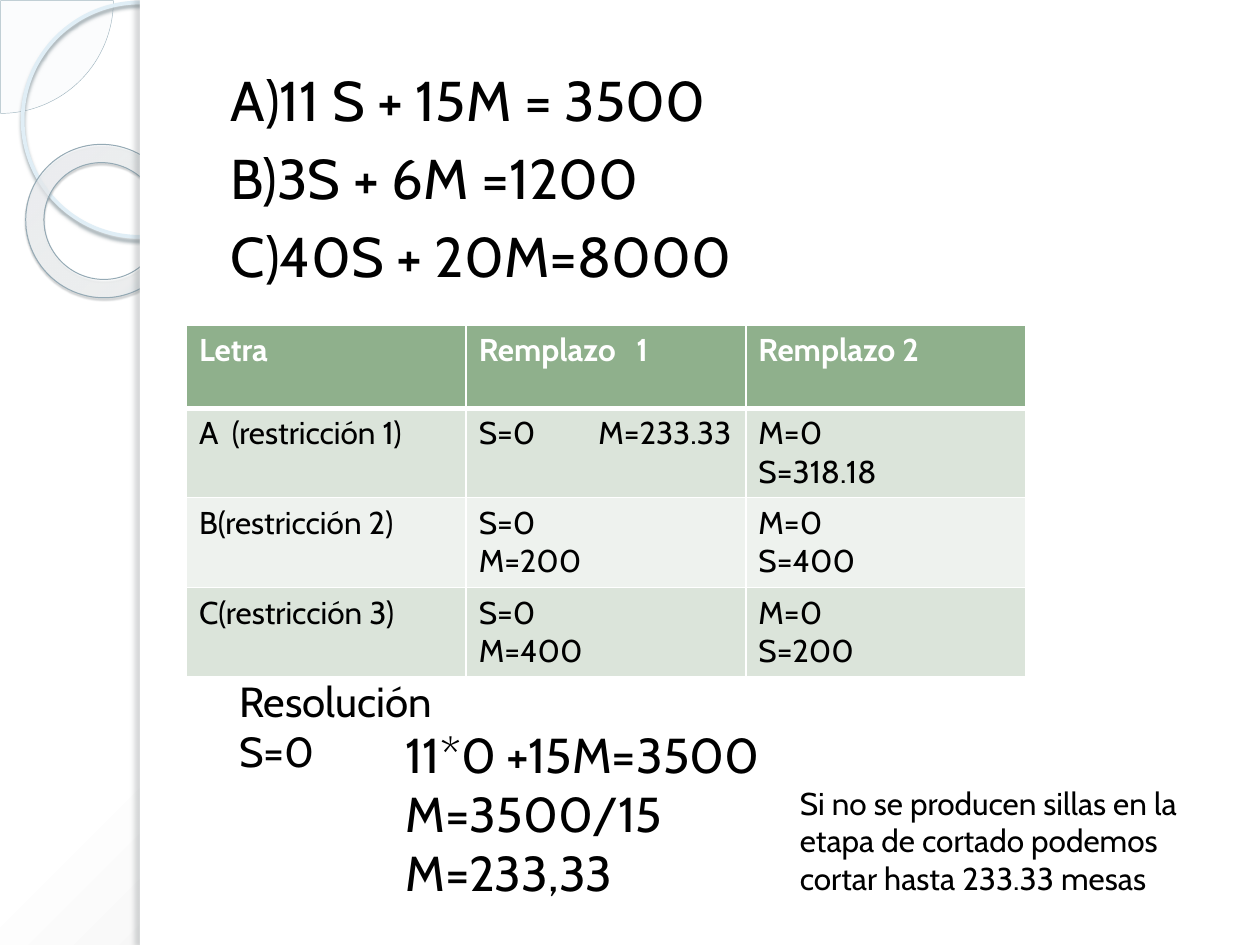
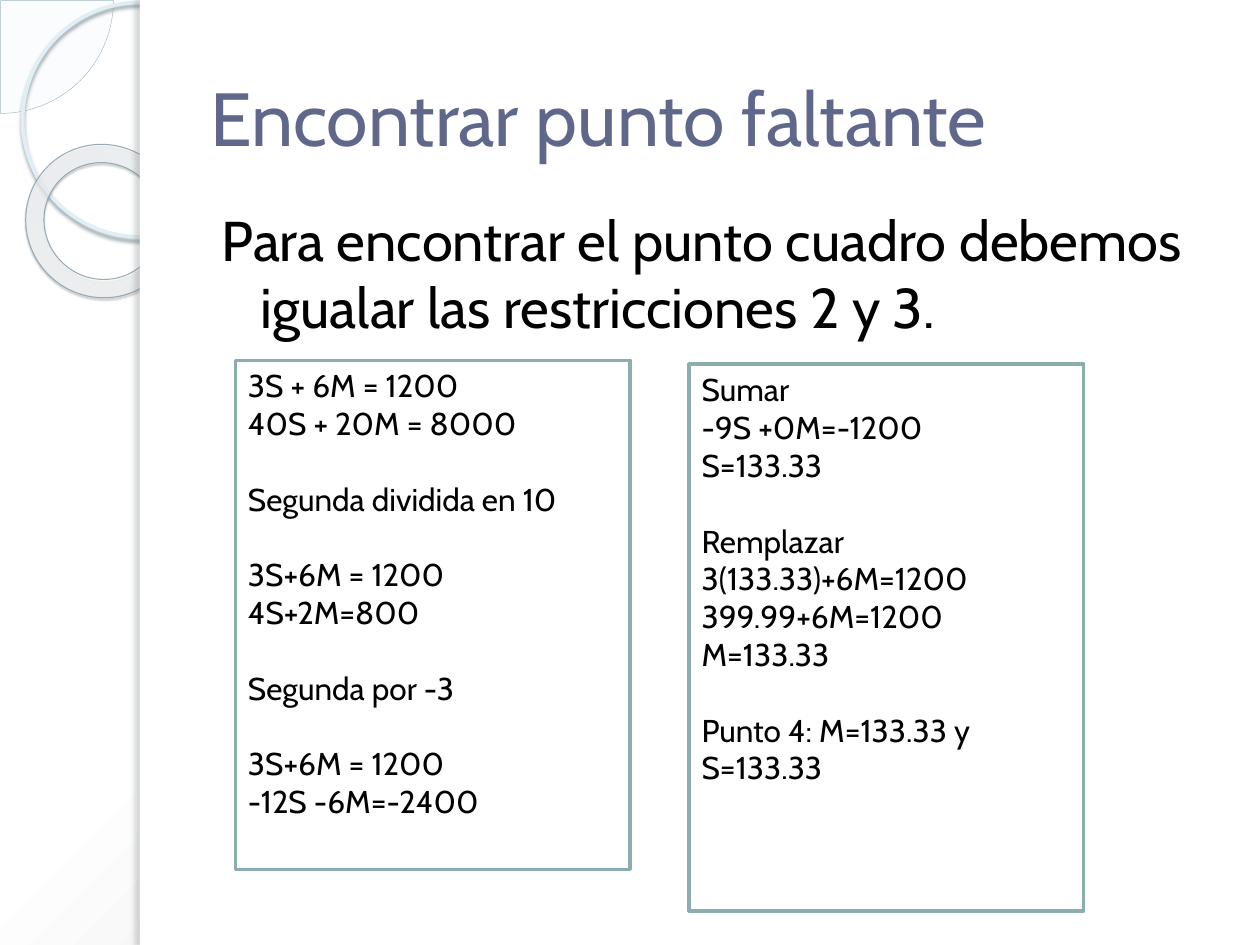
from dataclasses import dataclass
from lxml import etree
from pptx import Presentation
from pptx.dml.color import RGBColor
from pptx.enum.shapes import MSO_SHAPE as SHAPE
from pptx.enum.text import MSO_ANCHOR as ANCHOR, MSO_AUTO_SIZE as FIT, PP_ALIGN as ALIGN
from pptx.oxml import parse_xml
from pptx.oxml.ns import nsdecls, qn
from pptx.util import Pt

PX = 9144  # 100 px to the inch


@dataclass(frozen=True)
class Theme:
    font: str = "Cabin"
    ink: str = "000000"
    white: str = "FFFFFF"
    title: str = "5F688B"
    header: str = "8FB08C"
    bands: tuple = ("DBE4DA", "EEF2EE")
    frame: str = "8CADAE"
    title_size: int = 43
    body_size: int = 32
    formula_size: int = 28
    step_size: int = 24
    text_size: int = 18
    gap: float = 21.6  # one line of small text


T = Theme()


def px(*lengths):
    return [n * PX for n in lengths]


def write(tf, lines, size, color=T.ink, bold=False, body=False):
    tf.word_wrap = True
    tf.auto_size = FIT.NONE
    tf.text = "\n".join(lines)
    for p in tf.paragraphs:
        p.alignment = ALIGN.LEFT
        if body:
            p.space_before = Pt(6)
            pPr = p._p.get_or_add_pPr()
            pPr.set("marL", str(40 * PX))
            pPr.set("indent", str(-31 * PX))
            etree.SubElement(pPr, qn("a:buNone"))
        for r in p.runs:
            r.font.name, r.font.size, r.font.bold = T.font, Pt(size), bold
            r.font.color.rgb = RGBColor.from_string(color)


prs = Presentation()
prs.slide_width, prs.slide_height = px(1000, 750)
master = prs.slide_master
layout = prs.slide_layouts[1]
s = prs.slides.add_slide(layout)

# Shared side band: shape, box, adjustments, fill, line (colour, pt),
# shadow (colour, alpha %, blur pt, distance pt, degrees)
decor = [
    (SHAPE.PIE, (-89, -89, 179, 179), (0, 54.02), "F4F8FA", ("A1B6C0", 0.25), None),
    (SHAPE.OVAL, (18, 2, 186, 186), (), None, ("E0EEF6", 2.15), ("8E9CA2", 85, 2, 2, 90)),
    (SHAPE.DONUT, (20, 115, 123, 121), (0.12,), T.white, ("95AAB5", 0.58),
     ("454E52", 35, 1, 1.2, 75)),
    (SHAPE.RECTANGLE, (111, 0, 889, 750), (), T.white, None, None),
    (SHAPE.RECTANGLE, (111, 0, 8, 750), (), T.white, None, ("61686B", 25, 3, 3, 180)),
]
band = []
for i, (kind, box, adjustments, fill, line, shadow) in enumerate(decor):
    sp = s.shapes.add_shape(kind, *px(*box))
    for j, value in enumerate(adjustments):
        sp.adjustments[j] = value
    if fill:
        sp.fill.solid()
        sp.fill.fore_color.rgb = RGBColor.from_string(fill)
    else:
        sp.fill.background()
    if line:
        sp.line.color.rgb = RGBColor.from_string(line[0])
        sp.line.width = Pt(line[1])
    else:
        sp.line.fill.background()
    sp.shadow.inherit = False
    if shadow:
        color, alpha, blur, dist, angle = shadow
        sp.element.spPr.find(qn("a:effectLst")).append(parse_xml(
            f'<a:outerShdw {nsdecls("a")} blurRad="{Pt(blur)}" dist="{Pt(dist)}" '
            f'dir="{angle * 60000}" algn="tl" rotWithShape="0"><a:srgbClr val="{color}">'
            f'<a:alpha val="{alpha * 1000}"/></a:srgbClr></a:outerShdw>'))
    # The band belongs to the master, behind its placeholders
    sp.element.xpath(".//p:cNvPr")[0].set("id", str(101 + i))
    master.shapes.element.insert(2 + i, sp.element)
    band.append(sp)

pie, ring, donut = band[:3]
donut.rotation = 38.6
tint = pie.element.spPr.find(qn("a:solidFill"))[0]
etree.SubElement(tint, qn("a:alpha")).set("val", "33000")

# Gradients: stops (position %, colour, alpha %), focus rectangle in %
master.background.fill.solid()
gradients = [
    (master.element.xpath("./p:cSld/p:bg/p:bgPr")[0],
     [(0, "FFFFFF", 100), (40, "FFFFFF", 100), (100, "C5C5C5", 100)], (-24, -20, 124, 120)),
    (donut.element.spPr,
     [(0, "F7FAFC", 70), (70, "FBFDFE", 55), (100, "98C0D3", 60)], (-408, -50, 508, 150)),
]
for holder, stops, focus in gradients:
    gs = "".join(f'<a:gs pos="{pos * 1000}"><a:srgbClr val="{c}"><a:alpha val="{a * 1000}"/>'
                 f'</a:srgbClr></a:gs>' for pos, c, a in stops)
    sides = " ".join(f'{side}="{v * 1000}"' for side, v in zip("ltrb", focus))
    holder.replace(holder.find(qn("a:solidFill")), parse_xml(
        f'<a:gradFill {nsdecls("a")} rotWithShape="1"><a:gsLst>{gs}</a:gsLst>'
        f'<a:path path="circle"><a:fillToRect {sides}/></a:path></a:gradFill>'))

# Slide 1: constraints
title = s.shapes.title.element
title.getparent().remove(title)
body = s.placeholders[1]
body.left, body.top, body.width, body.height = px(164, 47, 820, 492)
write(body.text_frame, ["A)11 S + 15M = 3500", "B)3S + 6M =1200", "C)40S + 20M=8000"],
      T.body_size, body=True)

# Table of replacements
rows = [
    ("Letra", "Remplazo\t1", "Remplazo 2"),
    ("A\t(restricción 1)", "S=0\tM=233.33", "M=0\nS=318.18"),
    ("B(restricción 2)", "S=0\nM=200", "M=0\nS=400"),
    ("C(restricción 3)", "S=0\nM=400", "M=0\nS=200"),
]
tab_stops = {"Remplazo": 125, "A": 26, "S=0": 95}
table = s.shapes.add_table(4, 3, *px(148, 258, 666, 276)).table
for col in table.columns:
    col.width = 222 * PX
for i, texts in enumerate(rows):
    head = i == 0
    table.rows[i].height = (66 if head else 70) * PX
    for j, text in enumerate(texts):
        cell = table.cell(i, j)
        write(cell.text_frame, text.split("\n"), T.text_size, T.white if head else T.ink, head)
        if "\t" in text:
            stop = tab_stops[text.split("\t")[0]] * PX
            cell.text_frame.paragraphs[0]._p.get_or_add_pPr().append(parse_xml(
                f'<a:tabLst {nsdecls("a")}><a:tab pos="{stop}" algn="l"/></a:tabLst>'))
        cell.fill.solid()
        cell.fill.fore_color.rgb = RGBColor.from_string(T.header if head else T.bands[(i - 1) % 2])
        for k, side in enumerate("LRTB"):
            thick = (i, side) in ((0, "B"), (1, "T"))
            cell._tc.tcPr.insert(k, parse_xml(
                f'<a:ln{side} {nsdecls("a")} w="{Pt(3 if thick else 1)}"><a:solidFill>'
                f'<a:srgbClr val="{T.white}"/></a:solidFill></a:ln{side}>'))

# Worked solution
notes = [
    ((180, 531, 219, 172), T.step_size, ["Resolución", "S=0"]),
    ((312, 570, 500, 151), T.formula_size, ["11*0 +15M=3500", "M=3500/15", "M=233,33"]),
    ((625, 617, 336, 101), T.text_size,
     ["Si no se producen sillas en la etapa de cortado podemos cortar hasta 233.33 mesas"]),
]
for box, size, lines in notes:
    write(s.shapes.add_textbox(*px(*box)).text_frame, lines, size)

# Slide 2: missing point
s = prs.slides.add_slide(layout)
title, body = s.shapes.title, s.placeholders[1]
title.left, title.top, title.width, title.height = px(157, 30, 820, 125)
write(title.text_frame, ["Encontrar punto faltante"], T.title_size, T.title)
title.text_frame.vertical_anchor = ANCHOR.MIDDLE
body.left, body.top, body.width, body.height = px(157, 158, 820, 525)
write(body.text_frame,
      ["Para encontrar el punto cuadro debemos igualar las restricciones 2 y 3."],
      T.body_size, body=True)

# Framed steps, each group set apart by one line
frames = [
    ((187, 286, 313, 404), [
        ["3S + 6M = 1200", "40S + 20M = 8000"],
        ["Segunda dividida en 10"],
        ["3S+6M = 1200", "4S+2M=800"],
        ["Segunda por -3"],
        ["3S+6M = 1200", "-12S -6M=-2400"]]),
    ((547, 289, 313, 434), [
        ["Sumar", "-9S +0M=-1200", "S=133.33"],
        ["Remplazar", "3(133.33)+6M=1200", "399.99+6M=1200", "M=133.33"],
        ["Punto 4: M=133.33 y S=133.33"]]),
]
for box, groups in frames:
    sp = s.shapes.add_shape(SHAPE.RECTANGLE, *px(*box))
    sp.shadow.inherit = False
    sp.fill.solid()
    sp.fill.fore_color.rgb = RGBColor.from_string(T.white)
    sp.line.color.rgb = RGBColor.from_string(T.frame)
    sp.line.width = Pt(2)
    tf = sp.text_frame
    write(tf, sum(groups, []), T.text_size)
    tf.vertical_anchor = ANCHOR.TOP
    first = 0
    for group in groups[:-1]:
        first += len(group)
        tf.paragraphs[first].space_before = Pt(T.gap)

prs.save("out.pptx")
